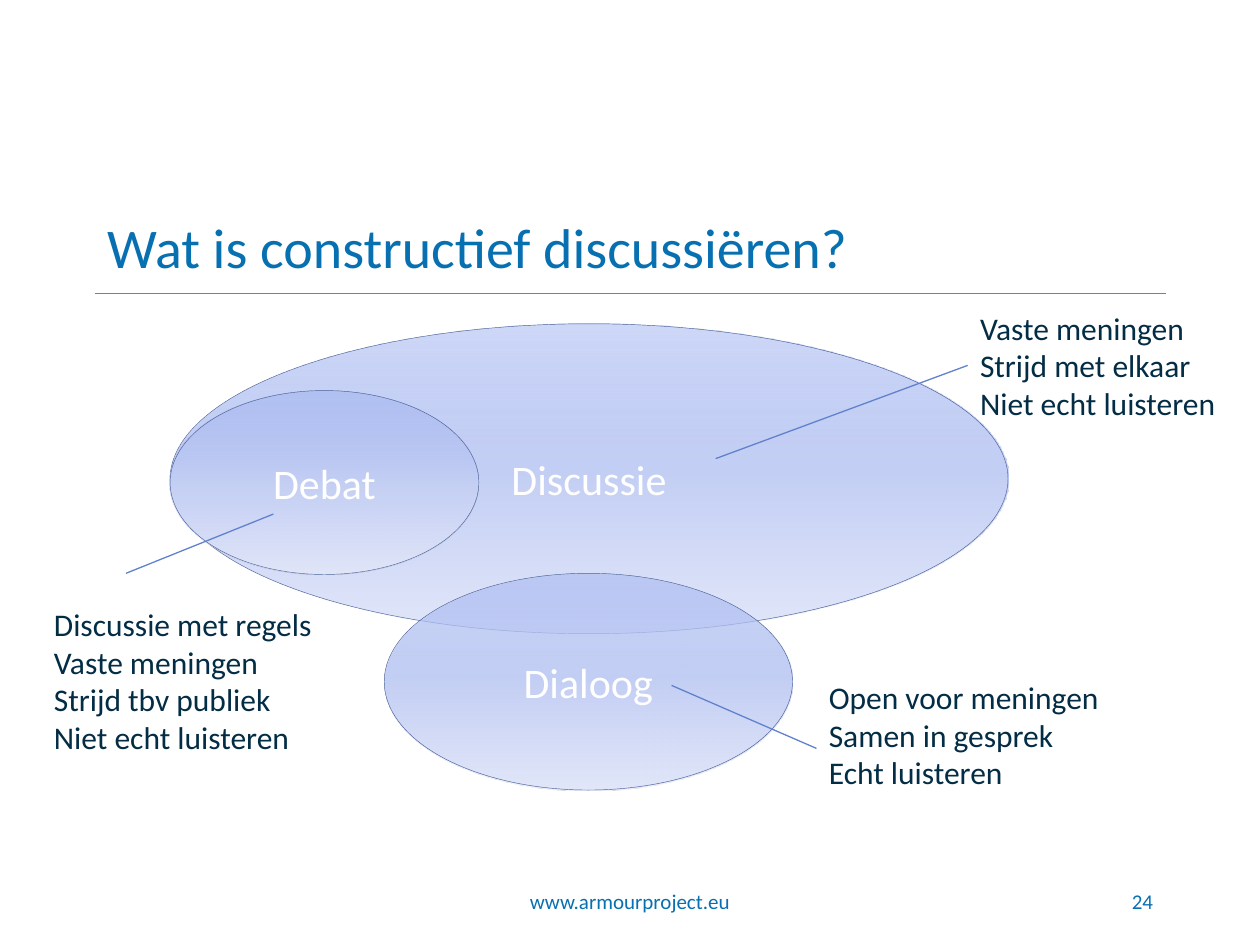
from copy import deepcopy

from lxml.etree import SubElement
from pptx import Presentation
from pptx.dml.color import RGBColor
from pptx.enum.shapes import MSO_CONNECTOR as Connector, MSO_SHAPE as Shape
from pptx.enum.text import MSO_ANCHOR as Anchor, MSO_AUTO_SIZE as AutoSize, PP_ALIGN as Align
from pptx.oxml.ns import qn
from pptx.util import Inches, Pt

COLUMNS, ROWS = 100, 75
WIDTH, HEIGHT = Inches(10), Inches(7.5)

TITLE = {"size": Pt(32), "color": "0770B1"}
FOOTER = {"size": Pt(12), "color": "0770B1"}
LABEL = {"size": Pt(24), "color": "FFFFFF"}
NOTE = {"size": Pt(18), "color": "032C45"}
STOPS = [(0, "A0B3F0", 50), (50, "C4CFF4", 100), (100, "E2E7F9", 100)]

CONCEPTS = [
    ("Discussie", (13.5, 2.4, 66.5, 24.6)),
    ("Debat", (13.5, 7.7, 24.5, 14.6)),
    ("Dialoog", (30.5, 22.2, 32.4, 17.2)),
]
NOTES = [
    (["Discussie met regels", "Vaste meningen", "Strijd tbv publiek", "Niet echt luisteren"],
     (3.3, 24.2, 23.3, 13.1), (10, 22.2, 21.7, 17.5)),
    (["Vaste meningen", "Strijd met elkaar", "Niet echt luisteren"],
     (76.8, 0.7, 23.3, 10.1), (56.8, 13.1, 76.8, 5.7)),
    (["Open voor meningen", "Samen in gesprek", "Echt luisteren"],
     (64.8, 30, 27.7, 10.1), (53.3, 31.1, 64.8, 36.1)),
]


def rgb(value):
    """Turn a hex string into a colour."""
    return RGBColor.from_string(value)


def grid(*cells):
    """Convert alternating column and row counts to slide lengths."""
    return [round(cell * (HEIGHT / ROWS if index % 2 else WIDTH / COLUMNS))
            for index, cell in enumerate(cells)]


def inside(box, left, top, width, height):
    """Shift a part by the corner of its region."""
    return grid(box[0] + left, box[1] + top, width, height)


def write(shape, lines, style, align=Align.LEFT, anchor=Anchor.MIDDLE, fit=AutoSize.NONE):
    """Fill a shape with formatted paragraphs."""
    frame = shape.text_frame
    for name, value in {"word_wrap": True, "auto_size": fit, "vertical_anchor": anchor}.items():
        setattr(frame, name, value)
    for index, line in enumerate(lines):
        para = frame.add_paragraph() if index else frame.paragraphs[0]
        para.alignment = align
        span = para.add_run()
        span.text = line
        for name, value in {"name": "Calibri", "size": style["size"]}.items():
            setattr(span.font, name, value)
        span.font.color.rgb = rgb(style["color"])


def fade(shape):
    """Give a shape the vertical, partly clear gradient."""
    shape.fill.gradient()
    shape.fill.gradient_angle = 270
    stop_list = shape.element.spPr.find(qn("a:gradFill")).find(qn("a:gsLst"))
    model = deepcopy(stop_list[0])
    for child in [*stop_list]:
        stop_list.remove(child)
    for position, color, opacity in STOPS:
        stop = deepcopy(model)
        stop.set("pos", str(position * 1000))
        for child in [*stop]:
            stop.remove(child)
        tint = SubElement(stop, qn("a:srgbClr"), val=color)
        if opacity < 100:
            SubElement(tint, qn("a:alpha"), val=str(opacity * 1000))
        stop_list.append(stop)


def add_line(page, ends, color):
    """Draw a thin straight line without shadow."""
    line = page.shapes.add_connector(Connector.STRAIGHT, *ends)
    line.line.color.rgb = rgb(color)
    line.line.width = Pt(0.75)
    SubElement(line.element.spPr, qn("a:effectLst"))


def add_header(page, box):
    """Place the title with a rule along its lower edge."""
    left, top, width, height = grid(*box)
    title = page.shapes.title
    for name, value in {"left": left, "top": top, "width": width, "height": height}.items():
        setattr(title, name, value)
    write(title, ["Wat is constructief discussiëren?"], TITLE)
    add_line(page, (left, top + height, left + width, top + height), "0BA7DF")


def add_concepts(page, box):
    """Place the overlapping ellipses."""
    for label, part in CONCEPTS:
        ellipse = page.shapes.add_shape(Shape.FLOWCHART_CONNECTOR, *inside(box, *part))
        ellipse.shadow.inherit = False
        fade(ellipse)
        ellipse.line.color.rgb = rgb("4B6299")
        ellipse.line.width = Pt(0.25)
        write(ellipse, [label], LABEL, Align.CENTER)


def add_notes(page, box):
    """Place the explanations and their leader lines."""
    for lines, part, (start_x, start_y, end_x, end_y) in NOTES:
        note = page.shapes.add_textbox(*inside(box, *part))
        write(note, lines, NOTE, anchor=Anchor.TOP, fit=AutoSize.SHAPE_TO_FIT_TEXT)
        ends = grid(box[0] + start_x, box[1] + start_y, box[0] + end_x, box[1] + end_y)
        add_line(page, ends, "6081CD")


def add_footer(page, box):
    """Place the centred address and the page number at the right."""
    width = box[2]
    parts = [
        ("www.armourproject.eu", (width - 23.3) / 2, 23.3, Align.CENTER),
        ("24", width - 20.8, 20.8, Align.RIGHT),
    ]
    for text, left, span_width, align in parts:
        note = page.shapes.add_textbox(*inside(box, left, 0, span_width, box[3]))
        write(note, [text], FOOTER, align)


def main():
    """Build and save the slide."""
    deck = Presentation()
    deck.slide_width, deck.slide_height = WIDTH, HEIGHT
    page = deck.slides.add_slide(deck.slide_layouts[5])
    add_header(page, (7.5, 15.8, 85, 7.5))
    diagram = (0, 23.3, 100, 40)
    add_concepts(page, diagram)
    add_notes(page, diagram)
    add_footer(page, (7.5, 69.5, 85, 4))
    deck.save("out.pptx")


if __name__ == "__main__":
    main()
